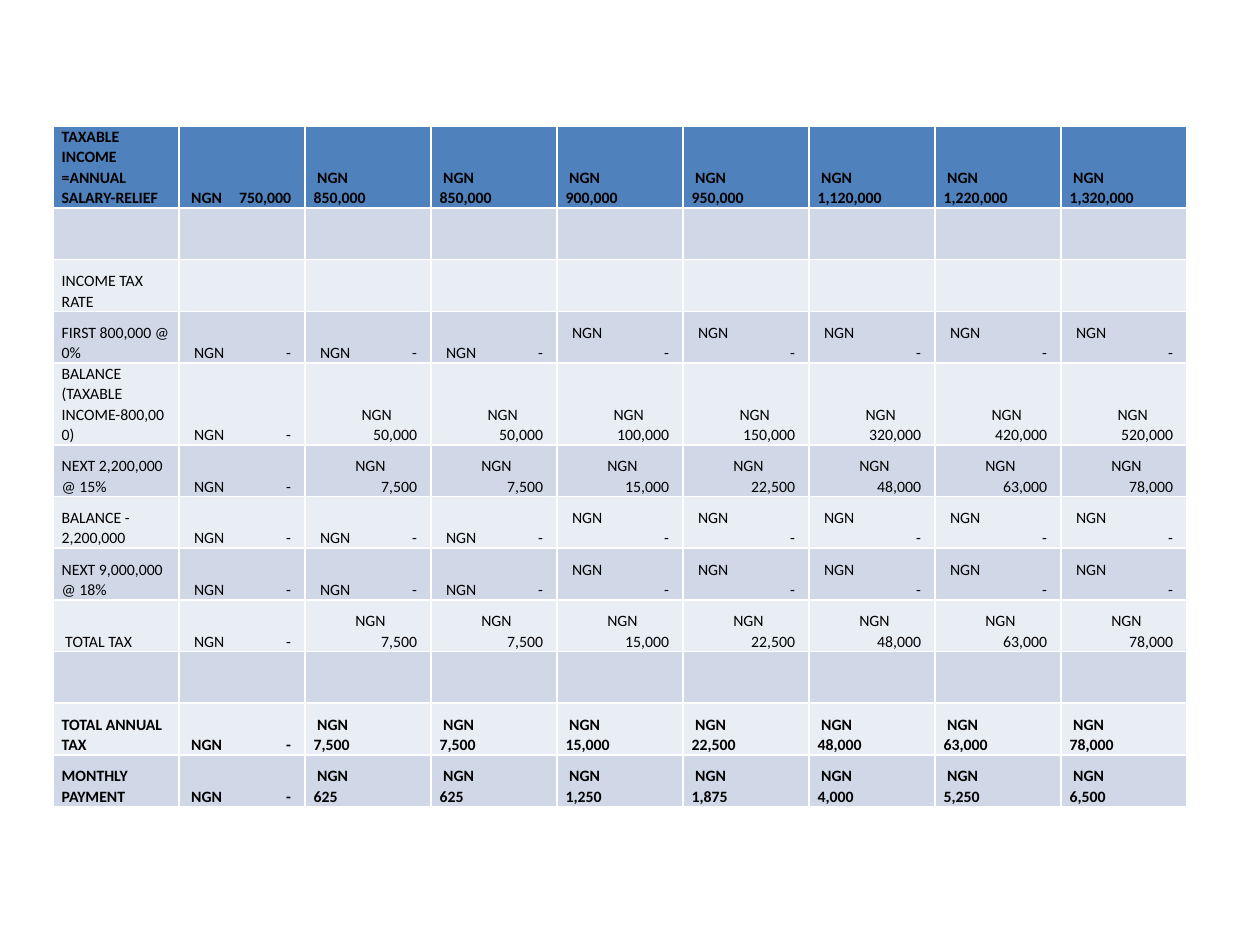
import copy
import dataclasses

import pptx
import pptx.dml.color
import pptx.enum.text
import pptx.oxml
import pptx.oxml.ns
import pptx.util
from pptx.util import Inches


@dataclasses.dataclass(frozen=True)
class Theme:
    font: str = "Calibri"
    size: float = 9
    line_spacing: float = 1.07
    ink: str = "000000"
    header: str = "4F81BD"
    bands: tuple = ("E9EDF4", "D0D8E8")


THEME = Theme()
AMOUNT_EDGE = 0.82
DASHES = ["-"] * 8
TAXES = ["-", "7,500", "7,500", "15,000", "22,500", "48,000", "63,000", "78,000"]

# label, amounts, bold, distance of the currency code from the cell's text edge
TAX_ROWS = [
    ("TAXABLE INCOME =ANNUAL SALARY-RELIEF",
     ["750,000", "850,000", "850,000", "900,000", "950,000",
      "1,120,000", "1,220,000", "1,320,000"], True, 0),
    ("", [], False, 0),
    ("INCOME TAX RATE", [], False, 0),
    ("FIRST 800,000 @ 0%", DASHES, False, 0.05),
    ("BALANCE (TAXABLE INCOME-800,000)",
     ["-", "50,000", "50,000", "100,000", "150,000",
      "320,000", "420,000", "520,000"], False, 0.38),
    ("NEXT 2,200,000 @ 15%", TAXES, False, 0.33),
    ("BALANCE - 2,200,000", DASHES, False, 0.05),
    ("NEXT 9,000,000 @ 18%", DASHES, False, 0.05),
    (" TOTAL TAX", TAXES, False, 0.33),
    ("", [], False, 0),
    ("TOTAL ANNUAL TAX", TAXES, True, 0),
    ("MONTHLY PAYMENT",
     ["-", "625", "625", "1,250", "1,875", "4,000", "5,250", "6,500"], True, 0),
]


def color(value):
    return pptx.dml.color.RGBColor.from_string(value)


def add_tab_stops(paragraph, stops):
    """Add (inches, alignment) tab stops; alignment is "l" or "r"."""
    qn = pptx.oxml.ns.qn
    tab_list = paragraph._p.get_or_add_pPr().makeelement(qn("a:tabLst"), {})
    for position, alignment in stops:
        tab = tab_list.makeelement(
            qn("a:tab"), {"pos": str(int(Inches(position))), "algn": alignment})
        tab_list.append(tab)
    paragraph._p.get_or_add_pPr().append(tab_list)


def put_text(cell, text, *, bold=False, tabs=()):
    paragraph = cell.text_frame.paragraphs[0]
    paragraph.text = text
    paragraph.line_spacing = THEME.line_spacing
    if tabs:
        add_tab_stops(paragraph, tabs)
    for run in paragraph.runs:
        run.font.name = THEME.font
        run.font.size = pptx.util.Pt(THEME.size)
        run.font.bold = bold
        run.font.color.rgb = color(THEME.ink)
    for line_break in paragraph._p.findall(pptx.oxml.ns.qn("a:br")):
        line_break.insert(0, copy.deepcopy(paragraph.runs[0]._r.rPr))


def put_amount(cell, amount, column, *, bold, code_start):
    """Set the currency code and amount on one line, or on two where narrow."""
    one_line = column == 1 or (amount == "-" and column <= 3)
    if bold:
        text = f" NGN\t{amount}" if one_line else f" NGN\v{amount}"
        put_text(cell, text, bold=True, tabs=[(AMOUNT_EDGE, "r")])
        return
    start = 0.05 if one_line else code_start
    text = f"\tNGN\t{amount}" if one_line else f"\tNGN\v\t\t{amount}"
    if start > 0.05:
        # long amounts begin left of the code, so the edge is their only stop
        text = f"\tNGN\v\t\t{amount}"
    put_text(cell, text, tabs=[(start, "l"), (AMOUNT_EDGE, "r")])


def style_cell(cell, fill):
    cell.fill.solid()
    cell.fill.fore_color.rgb = color(fill)
    cell.vertical_anchor = pptx.enum.text.MSO_ANCHOR.BOTTOM
    cell.margin_left = cell.margin_right = Inches(0.07)
    cell.margin_top = cell.margin_bottom = 0


def add_tax_table(slide):
    row_count, column_count = len(TAX_ROWS), 9
    table = slide.shapes.add_table(
        row_count, column_count, Inches(0.42), Inches(1),
        Inches(column_count), Inches(0.41 * row_count)).table
    for row, (label, amounts, bold, code_start) in enumerate(TAX_ROWS):
        fill = THEME.bands[row % 2] if row else THEME.header
        for cell in table.rows[row].cells:
            style_cell(cell, fill)
        if label:
            put_text(table.cell(row, 0), label, bold=bold)
        for column, amount in enumerate(amounts, start=1):
            put_amount(table.cell(row, column), amount, column,
                       bold=bold, code_start=code_start)


def main():
    presentation = pptx.Presentation()
    presentation.slide_width = Inches(10)
    presentation.slide_height = Inches(7.5)
    slide = presentation.slides.add_slide(presentation.slide_layouts[6])
    add_tax_table(slide)
    presentation.save("out.pptx")


if __name__ == "__main__":
    main()
